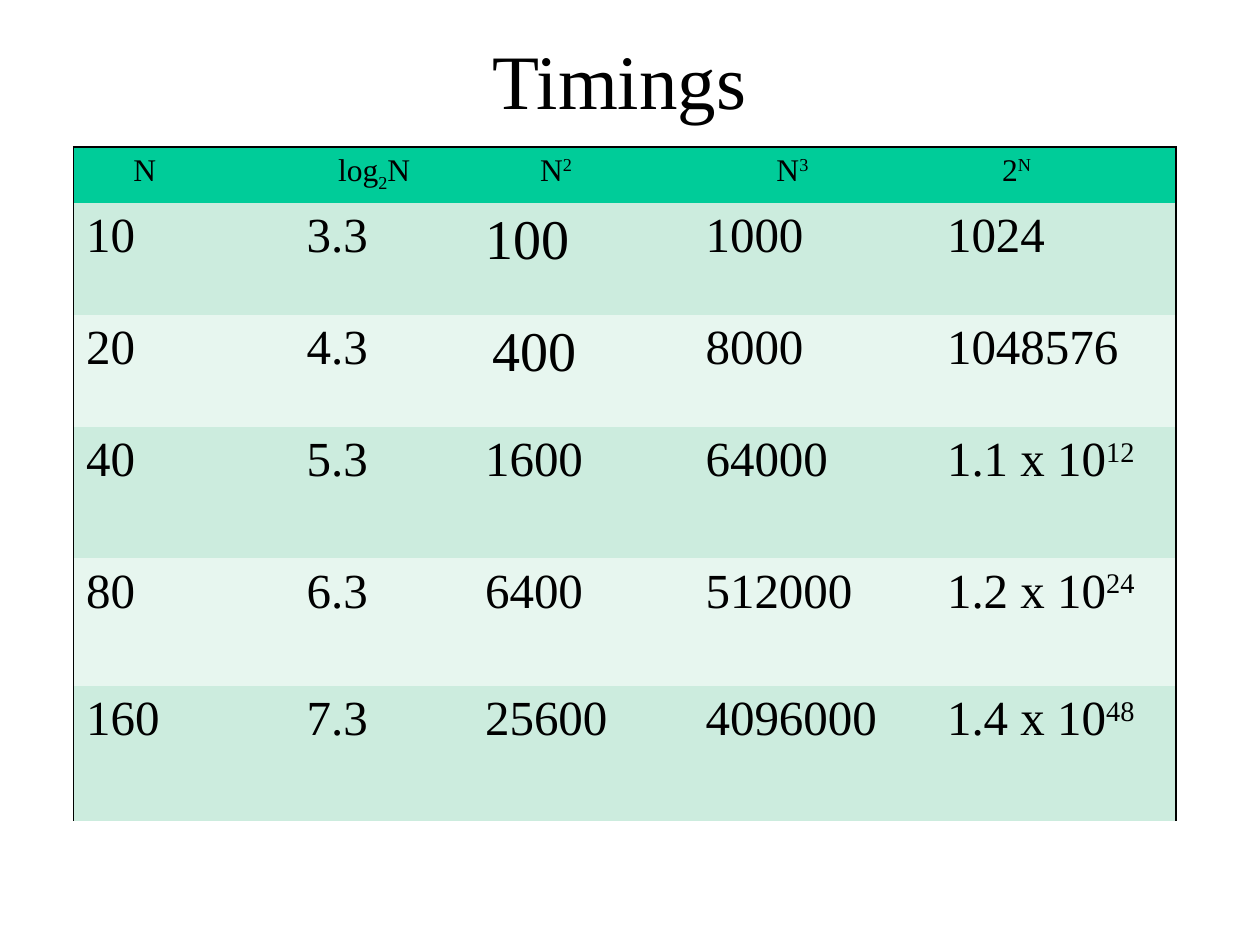
from dataclasses import dataclass

from lxml import etree
from pptx import Presentation
from pptx.dml.color import RGBColor
from pptx.enum.text import MSO_ANCHOR, PP_ALIGN
from pptx.oxml.ns import qn
from pptx.util import Pt

MIDDLE = MSO_ANCHOR.MIDDLE
CENTER = PP_ALIGN.CENTER
FONT = "Times New Roman"
PLAIN = "{2D5ABB26-0587-4C30-8999-92F81FD0307C}"
COLORS = {
    "ink": "000000",
    "head": "00CC99",
    "odd": "CCECDE",
    "even": "E7F6EF",
}
WIDTHS = [126, 102, 126, 138, 138]
HEIGHTS = [32, 64, 64, 75, 73, 77]


@dataclass(frozen=True)
class Entry:
    text: str
    shift: str = ""
    base: int = 30
    tail: str = ""
    size: int = 28
    indent: float = 0


def head(text: str, shift: str, indent: float, base: int = 30, tail: str = "") -> Entry:
    return Entry(text, shift, base, tail, 18, indent)


def power(text: str, shift: str) -> Entry:
    return Entry(f"{text} x 10", shift)


ROWS = [
    [head("N", "", 27), head("log", "2", 18, -25, "N"), head("N", "2", 31.5),
     head("N", "3", 40.5), head("2", "N", 31.5)],
    [Entry("10"), Entry("3.3"), Entry("100", size=32), Entry("1000"), Entry("1024")],
    [Entry("20"), Entry("4.3"), Entry("400", size=32, indent=4.5),
     Entry("8000"), Entry("1048576")],
    [Entry("40"), Entry("5.3"), Entry("1600"), Entry("64000"), power("1.1", "12")],
    [Entry("80"), Entry("6.3"), Entry("6400"), Entry("512000"), power("1.2", "24")],
    [Entry("160"), Entry("7.3"), Entry("25600"), Entry("4096000"), power("1.4", "48")],
]


def style(para, size: int) -> None:
    para.font.name = FONT
    para.font.size = Pt(size)
    para.font.color.rgb = RGBColor.from_string(COLORS["ink"])


def write(para, entry: Entry) -> None:
    for text, base in ((entry.text, 0), (entry.shift, entry.base), (entry.tail, 0)):
        if text:
            run = para.add_run()
            run.text = text
            if base:
                run._r.get_or_add_rPr().set("baseline", str(base * 1000))
    if entry.indent:
        props = para._p.get_or_add_pPr()
        props.set("marL", str(Pt(entry.indent)))
        props.set("indent", "0")
    style(para, entry.size)


def border(cell, sides: list[str]) -> None:
    props = cell._tc.get_or_add_tcPr()
    for spot, side in enumerate(sides):
        line = etree.Element(qn(f"a:ln{side}"), w=str(Pt(1)))
        fill = etree.SubElement(line, qn("a:solidFill"))
        etree.SubElement(fill, qn("a:srgbClr"), val=COLORS["ink"])
        props.insert(spot, line)


def add_title(slide, text: str) -> None:
    box = slide.shapes.add_textbox(Pt(48), Pt(0), Pt(612), Pt(90))
    frame = box.text_frame
    frame.word_wrap = True
    frame.vertical_anchor = MIDDLE
    para = frame.paragraphs[0]
    para.alignment = CENTER
    write(para, Entry(text, size=44))


def add_grid(slide, rows: list[list[Entry]]) -> None:
    frame = slide.shapes.add_table(
        len(rows), len(WIDTHS), Pt(42), Pt(84), Pt(sum(WIDTHS)), Pt(sum(HEIGHTS)))
    table = frame.table
    table.first_row = False
    table.horz_banding = False
    table._tbl.tblPr.find(qn("a:tableStyleId")).text = PLAIN
    for col, width in zip(table.columns, WIDTHS):
        col.width = Pt(width)
    for y, (row, height) in enumerate(zip(rows, HEIGHTS)):
        table.rows[y].height = Pt(height)
        shade = "head" if y == 0 else "odd" if y % 2 else "even"
        for x, entry in enumerate(row):
            cell = table.cell(y, x)
            cell.fill.solid()
            cell.fill.fore_color.rgb = RGBColor.from_string(COLORS[shade])
            write(cell.text_frame.paragraphs[0], entry)
            edges = {"L": x == 0, "R": x == len(row) - 1, "T": y == 0}
            border(cell, [side for side, shown in edges.items() if shown])


def main() -> None:
    deck = Presentation()
    deck.slide_width = Pt(720)
    deck.slide_height = Pt(540)
    slide = deck.slides.add_slide(deck.slide_layouts[6])
    add_title(slide, "Timings")
    add_grid(slide, ROWS)
    deck.save("out.pptx")


if __name__ == "__main__":
    main()
